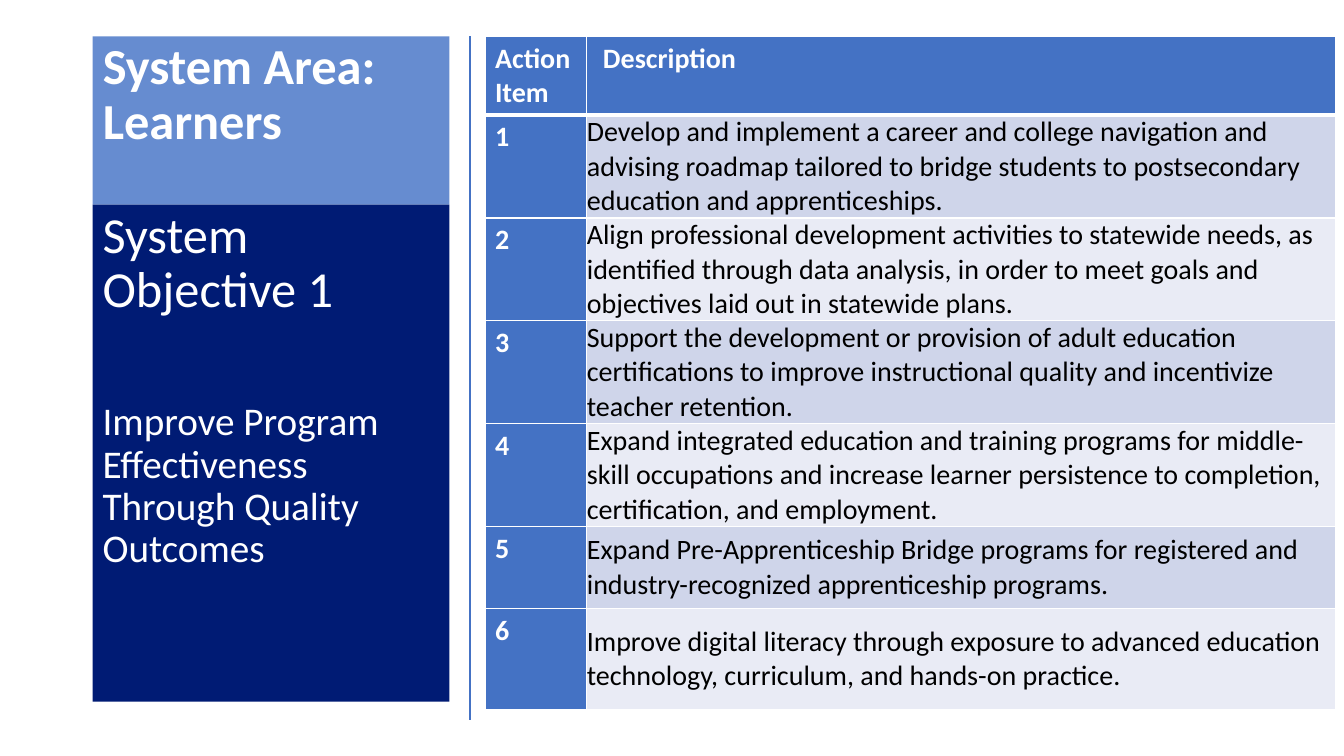
import dataclasses

import pptx
import pptx.dml.color
import pptx.enum.shapes
import pptx.enum.text
import pptx.oxml.ns
import pptx.util
from lxml import etree

TOP = pptx.enum.text.MSO_ANCHOR.TOP
MIDDLE = pptx.enum.text.MSO_ANCHOR.MIDDLE


@dataclasses.dataclass(frozen=True)
class Theme:
    font: str = "Calibri"
    heading: int = 36
    lead: int = 28
    table: int = 20
    white: str = "FFFFFF"
    black: str = "000000"
    area: str = "668CD0"
    objective: str = "001B74"
    accent: str = "4472C4"
    bands: tuple = ("CFD5EA", "E9EBF5")


def rgb(value):
    return pptx.dml.color.RGBColor.from_string(value)


class Deck:
    """Places elements on a grid of 48 columns by 27 rows."""

    COLUMNS, ROWS = 48, 27

    def __init__(self, theme):
        self.theme = theme
        self.prs = pptx.Presentation()
        self.prs.slide_width = pptx.util.Inches(13.33)
        self.prs.slide_height = pptx.util.Inches(7.5)
        self.s = self.prs.slides.add_slide(self.prs.slide_layouts[5])

    def x(self, columns):
        return round(self.prs.slide_width * columns / self.COLUMNS)

    def y(self, rows):
        return round(self.prs.slide_height * rows / self.ROWS)

    def box(self, left, top, width, height):
        return self.x(left), self.y(top), self.x(width), self.y(height)

    def style(self, p, size, color, bold=False):
        p.alignment = pptx.enum.text.PP_ALIGN.LEFT
        f = p.font
        f.name, f.size, f.bold = self.theme.font, pptx.util.Pt(size), bold
        f.color.rgb = rgb(color)

    def panel(self, sp, fill, paragraphs, bold=False):
        """Fill a shape and write (text, size, space before) paragraphs."""
        sp.fill.solid()
        sp.fill.fore_color.rgb = rgb(fill)
        sp.line.fill.background()
        tf = sp.text_frame
        tf.word_wrap = True
        tf.auto_size = pptx.enum.text.MSO_AUTO_SIZE.NONE
        tf.vertical_anchor = TOP
        for i, (text, size, before) in enumerate(paragraphs):
            p = tf.add_paragraph() if i else tf.paragraphs[0]
            p.text = text
            p.line_spacing = 0.9
            p.space_before = pptx.util.Pt(before)
            self.style(p, size, self.theme.white, bold)

    def title(self, box, fill, text):
        sp = self.s.shapes.title
        sp.left, sp.top, sp.width, sp.height = self.box(*box)
        self.panel(sp, fill, [(text, self.theme.heading, 0)], bold=True)

    def text_panel(self, box, fill, paragraphs):
        sp = self.s.shapes.add_shape(
            pptx.enum.shapes.MSO_SHAPE.RECTANGLE, *self.box(*box))
        sp.shadow.inherit = False
        self.panel(sp, fill, paragraphs)

    def rule(self, column, top, bottom):
        line = self.s.shapes.add_connector(
            pptx.enum.shapes.MSO_CONNECTOR.STRAIGHT,
            self.x(column), self.y(top), self.x(column), self.y(bottom))
        line.line.color.rgb = rgb(self.theme.accent)
        line.line.width = pptx.util.Pt(1.5)
        etree.SubElement(line._element.spPr, pptx.oxml.ns.qn("a:effectLst"))

    def borders(self, cell, **widths):
        tc_pr = cell._tc.get_or_add_tcPr()
        for side in "LRTB":
            ln = etree.SubElement(tc_pr, pptx.oxml.ns.qn(f"a:ln{side}"))
            ln.set("w", str(pptx.util.Pt(widths.get(side, 1))))
            fill = etree.SubElement(ln, pptx.oxml.ns.qn("a:solidFill"))
            color = etree.SubElement(fill, pptx.oxml.ns.qn("a:srgbClr"))
            color.set("val", self.theme.white)

    def cell(self, cell, text, fill, color, bold, **widths):
        self.borders(cell, **widths)
        cell.fill.solid()
        cell.fill.fore_color.rgb = rgb(fill)
        p = cell.text_frame.paragraphs[0]
        p.text = text
        self.style(p, self.theme.table, color, bold)

    def table(self, left, top, widths, heights, header, items):
        t = self.theme
        box = self.box(left, top, sum(widths), sum(heights))
        tbl = self.s.shapes.add_table(len(heights), len(widths), *box).table
        for col, width in zip(tbl.columns, widths):
            col.width = self.x(width)
        for row, height in zip(tbl.rows, heights):
            row.height = self.y(height)
        for c, text in enumerate(header):
            self.cell(tbl.cell(0, c), text, t.accent, t.white, True, B=3)
        tbl.cell(0, 1).margin_left = pptx.util.Inches(0.16)
        for n, text in enumerate(items, 1):
            widths_above = {"T": 3} if n == 1 else {}
            self.cell(tbl.cell(n, 0), str(n), t.accent, t.white, True,
                      **widths_above)
            description = tbl.cell(n, 1)
            self.cell(description, text, t.bands[(n - 1) % 2], t.black, False,
                      **widths_above)
            description.vertical_anchor = MIDDLE
            description.margin_left = description.margin_right = 0
            description.margin_top = description.margin_bottom = 0


ACTION_ITEMS = [
    "Develop and implement a career and college navigation and advising "
    "roadmap tailored to bridge students to postsecondary education and "
    "apprenticeships.",
    "Align professional development activities to statewide needs, as "
    "identified through data analysis, in order to meet goals and objectives "
    "laid out in statewide plans.",
    "Support the development or provision of adult education certifications "
    "to improve instructional quality and incentivize teacher retention.",
    "Expand integrated education and training programs for middle-skill "
    "occupations and increase learner persistence to completion, "
    "certification, and employment.",
    "Expand Pre-Apprenticeship Bridge programs for registered and "
    "industry-recognized apprenticeship programs.",
    "Improve digital literacy through exposure to advanced education "
    "technology, curriculum, and hands-on practice.",
]


def main():
    theme = Theme()
    deck = Deck(theme)
    left, top, width, split = 3.31, 1.3, 12.74, 7.31

    # Left column: system area and objective
    deck.title((left, top, width, split - top), theme.area,
               "System Area: Learners")
    deck.text_panel((left, split, width, 17.75), theme.objective, [
        ("System Objective 1", theme.heading, 0),
        ("Improve Program Effectiveness Through Quality Outcomes",
         theme.lead, 59.5),
    ])

    # Divider
    deck.rule(16.78, top, 25.7)

    # Action items
    deck.table(17.32, top, [3.64, 26.75], [2.77] + [3.6] * 4 + [2.92, 3.6],
               ["Action Item", "Description"], ACTION_ITEMS)

    deck.prs.save("out.pptx")


if __name__ == "__main__":
    main()
